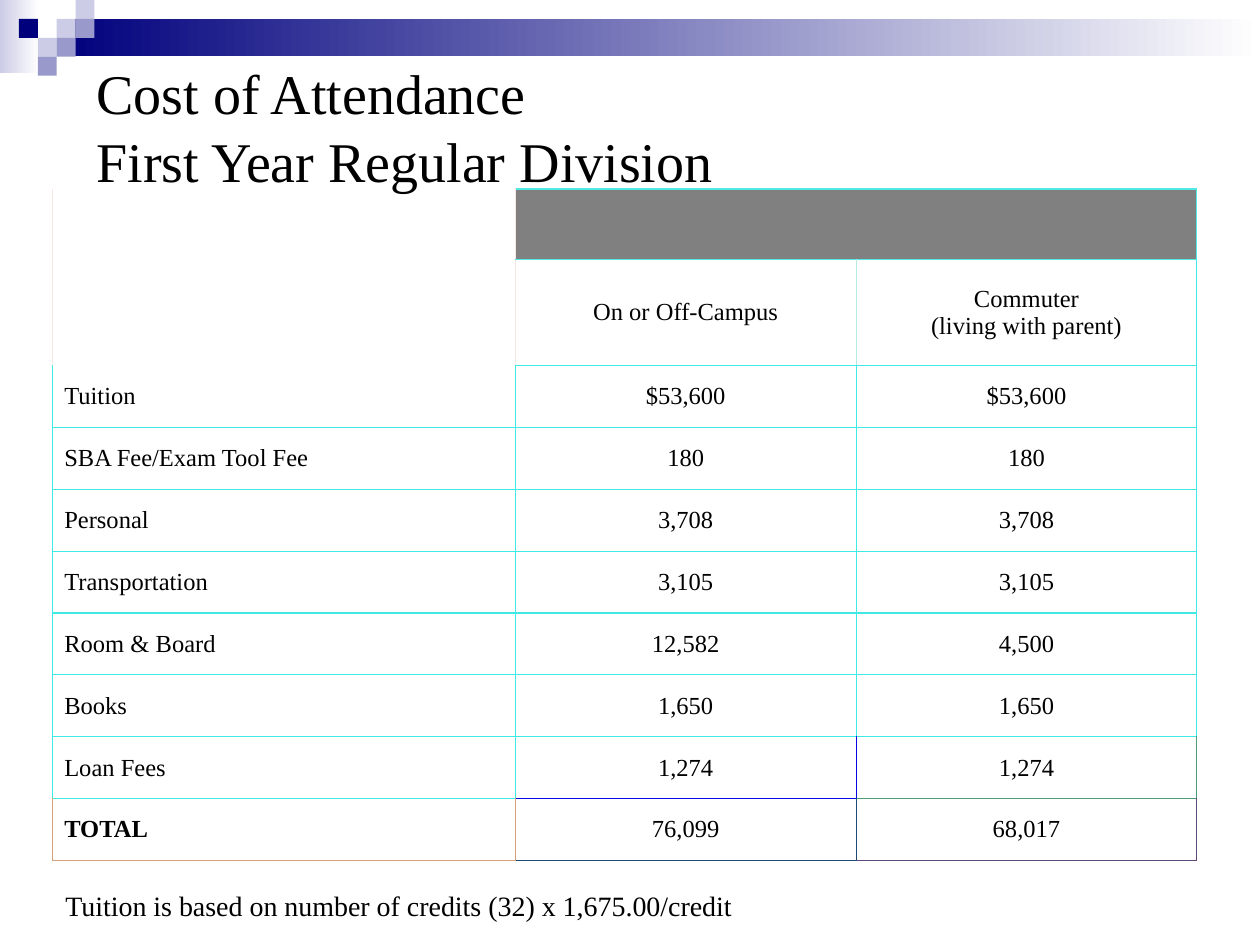
"""Build the cost of attendance slide."""
from dataclasses import dataclass

from lxml import etree
from pptx import Presentation
from pptx.dml.color import RGBColor
from pptx.enum.shapes import MSO_SHAPE
from pptx.enum.text import MSO_ANCHOR, MSO_AUTO_SIZE, PP_ALIGN
from pptx.oxml.ns import qn
from pptx.util import Pt

RECT = MSO_SHAPE.RECTANGLE
MIDDLE = MSO_ANCHOR.MIDDLE
NO_FIT = MSO_AUTO_SIZE.NONE
LEFT, CENTER = PP_ALIGN.LEFT, PP_ALIGN.CENTER


@dataclass(frozen=True)
class Theme:
    """Colours, font and type sizes of the slide."""
    font: str = "Times New Roman"
    title: int = 32
    note: int = 16
    cell: int = 14
    text: str = "000000"
    white: str = "FFFFFF"
    navy: str = "00007D"
    lilac: str = "CCCCE6"
    violet: str = "9999CC"
    header: str = "808080"
    cyan: str = "40EAE4"
    aqua: str = "50E9E4"
    pale_aqua: str = "B8EAE4"
    blush: str = "F8E6E4"
    blue: str = "0807E5"
    green: str = "509E78"
    tan: str = "D8A078"
    steel: str = "204A76"
    plum: str = "604976"


@dataclass(frozen=True)
class Block:
    """A rectangle that fades to the second colour when one is given."""
    left: float
    top: float
    width: float
    height: float
    color: str
    fade: str = ""


@dataclass(frozen=True)
class Edges:
    """Border colours of one cell; an empty colour draws no line."""
    left: str
    top: str
    right: str
    bottom: str


T = Theme()
UNIT = 10.8
TABLE_LEFT, TABLE_TOP, TABLE_WIDTH = 30.24, 108, 653.76
COL_WIDTHS = (264.24, 194.76, 194.76)
ROW_HEIGHTS = (40.5, 60.3) + (35.4,) * 8

BANDS = (
    Block(0, 0, 22.3, 41.8, T.lilac, T.white),
    Block(3 * UNIT, UNIT, 720 - 3 * UNIT, 21.3, T.navy, T.white),
)
SQUARES = (
    (3, 1, T.lilac), (4, 0, T.lilac), (4, 1, T.violet), (2, 2, T.lilac),
    (1, 1, T.navy), (3, 2, T.violet), (2, 3, T.violet),
)
ROWS = (
    ("", "", ""),
    ("", "On or Off-Campus", "Commuter\n(living with parent)"),
    ("Tuition", "$53,600", "$53,600"),
    ("SBA Fee/Exam Tool Fee", "180", "180"),
    ("Personal", "3,708", "3,708"),
    ("Transportation", "3,105", "3,105"),
    ("Room & Board", "12,582", "4,500"),
    ("Books", "1,650", "1,650"),
    ("Loan Fees", "1,274", "1,274"),
    ("TOTAL", "76,099", "68,017"),
)
CORNER = Edges(T.blush, "", T.blush, T.white)
BANNER = Edges(T.blush, T.aqua, T.aqua, T.aqua)
GRID = Edges(T.cyan, T.cyan, T.cyan, T.cyan)
SPECIAL_EDGES = {
    (0, 0): CORNER, (1, 0): CORNER, (0, 1): BANNER, (0, 2): BANNER,
    (1, 1): Edges(T.blush, T.aqua, T.pale_aqua, T.cyan),
    (1, 2): Edges(T.pale_aqua, T.aqua, T.cyan, T.cyan),
    (2, 0): Edges(T.cyan, T.white, T.cyan, T.cyan),
    (8, 1): Edges(T.cyan, T.cyan, T.blue, T.blue),
    (8, 2): Edges(T.blue, T.cyan, T.green, T.green),
    (9, 0): Edges(T.tan, T.cyan, T.tan, T.tan),
    (9, 1): Edges(T.tan, T.blue, T.steel, T.steel),
    (9, 2): Edges(T.steel, T.green, T.plum, T.plum),
}


def style(p, size: int, align=LEFT, bold: bool = False) -> None:
    """Format one paragraph."""
    p.alignment = align
    p.font.name, p.font.size, p.font.bold = T.font, Pt(size), bold
    p.font.color.rgb = RGBColor.from_string(T.text)


def draw_block(s, block: Block) -> None:
    """Draw one solid or fading rectangle."""
    box = (block.left, block.top, block.width, block.height)
    sp = s.shapes.add_shape(RECT, *map(Pt, box))
    sp.shadow.inherit = False
    sp.line.fill.background()
    if block.fade:
        sp.fill.gradient()
        sp.fill.gradient_angle = 0
        for stop, color in zip(sp.fill.gradient_stops, (block.color, block.fade)):
            stop.color.rgb = RGBColor.from_string(color)
    else:
        sp.fill.solid()
        sp.fill.fore_color.rgb = RGBColor.from_string(block.color)


def set_edges(cell, edges: Edges) -> None:
    """Give a cell its four border lines."""
    tc_pr = cell._tc.get_or_add_tcPr()
    sides = (("a:lnL", edges.left), ("a:lnR", edges.right),
             ("a:lnT", edges.top), ("a:lnB", edges.bottom))
    for index, (tag, color) in enumerate(sides):
        ln = etree.Element(qn(tag), w=str(Pt(0.75)))
        if color:
            fill = etree.SubElement(ln, qn("a:solidFill"))
            etree.SubElement(fill, qn("a:srgbClr"), val=color)
        else:
            etree.SubElement(ln, qn("a:noFill"))
        tc_pr.insert(index, ln)


def fill_cell(cell, row: int, col: int, text: str) -> None:
    """Write and format one table cell."""
    cell.vertical_anchor = MIDDLE
    cell.margin_left = cell.margin_right = Pt(6.5)
    cell.margin_top = cell.margin_bottom = Pt(3.6)
    if row == 0 and col:
        cell.fill.solid()
        cell.fill.fore_color.rgb = RGBColor.from_string(T.header)
    else:
        cell.fill.background()
    cell.text = text
    for p in cell.text_frame.paragraphs:
        style(p, T.cell, CENTER if col else LEFT, text == "TOTAL")
    set_edges(cell, SPECIAL_EDGES.get((row, col), GRID))


def draw_table(s) -> None:
    """Draw the cost table."""
    box = (TABLE_LEFT, TABLE_TOP, TABLE_WIDTH, sum(ROW_HEIGHTS))
    table = s.shapes.add_table(len(ROWS), len(COL_WIDTHS), *map(Pt, box)).table
    table.first_row = table.horz_banding = False
    for column, width in zip(table.columns, COL_WIDTHS):
        column.width = Pt(width)
    for row, height in zip(table.rows, ROW_HEIGHTS):
        row.height = Pt(height)
    for i, texts in enumerate(ROWS):
        for j, text in enumerate(texts):
            fill_cell(table.cell(i, j), i, j, text)
    table.cell(0, 0).merge(table.cell(1, 0))
    table.cell(0, 1).merge(table.cell(0, 2))


def draw_title(s) -> None:
    """Place and format the title."""
    sp = s.shapes.title
    sp.left, sp.top, sp.width, sp.height = map(Pt, (48, 36, 636, 72))
    tf = sp.text_frame
    tf.text = "Cost of Attendance \vFirst Year Regular Division"
    tf.auto_size, tf.vertical_anchor = NO_FIT, MIDDLE
    style(tf.paragraphs[0], T.title)


def draw_note(s) -> None:
    """Write the note below the table."""
    sp = s.shapes.add_textbox(*map(Pt, (TABLE_LEFT, 504, TABLE_WIDTH, 26.6)))
    tf = sp.text_frame
    tf.word_wrap = True
    tf.text = "Tuition is based on number of credits (32) x 1,675.00/credit"
    style(tf.paragraphs[0], T.note)


def main() -> None:
    """Build and save the slide."""
    prs = Presentation()
    prs.slide_width, prs.slide_height = Pt(720), Pt(540)
    s = prs.slides.add_slide(prs.slide_layouts[5])
    for band in BANDS:
        draw_block(s, band)
    for col, row, color in SQUARES:
        draw_block(s, Block(col * UNIT, row * UNIT, UNIT, UNIT, color))
    draw_title(s)
    draw_table(s)
    draw_note(s)
    prs.save("out.pptx")


if __name__ == "__main__":
    main()
